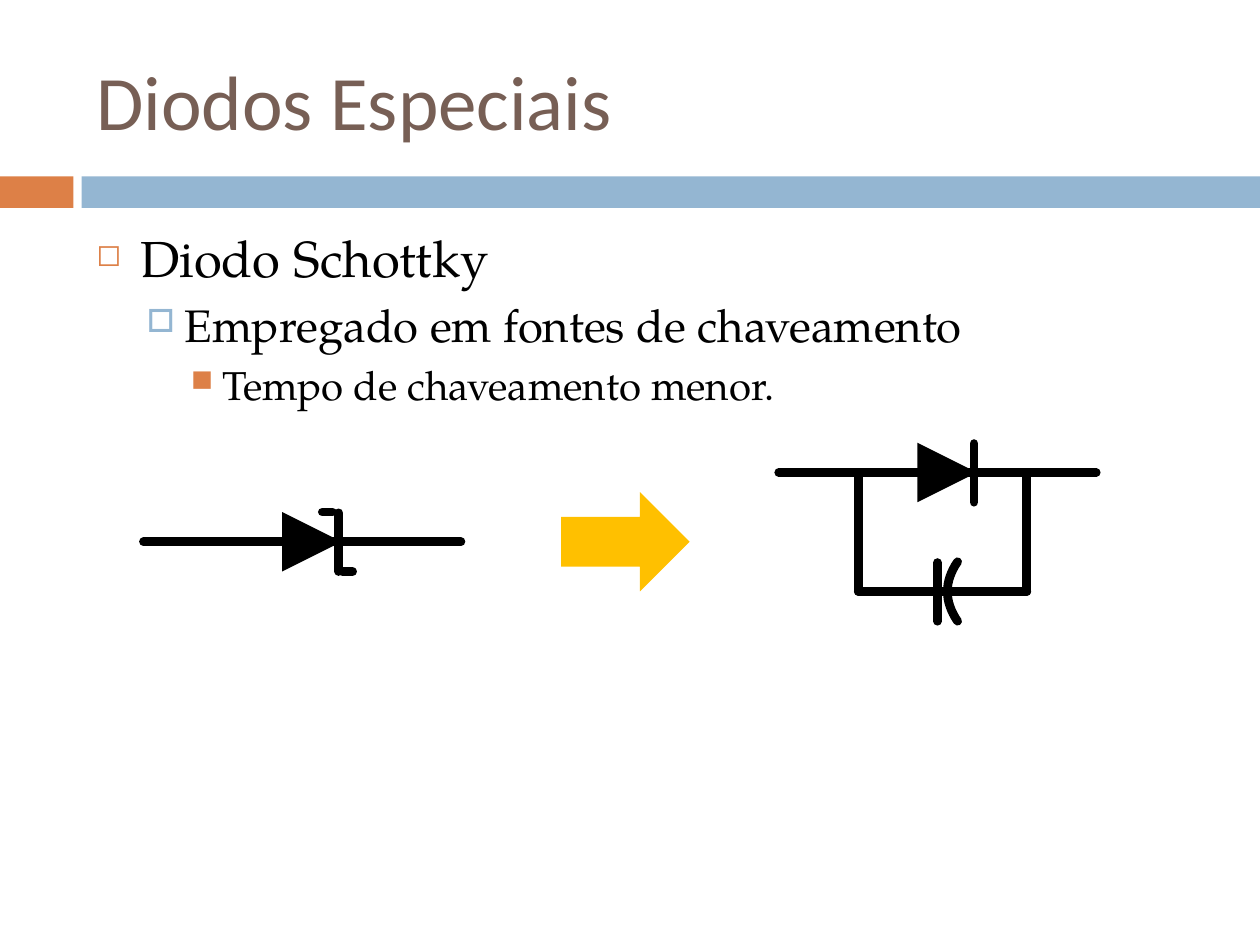
import lxml.etree
import pptx
import pptx.dml.color
import pptx.enum.shapes
import pptx.enum.text
import pptx.oxml.ns
import pptx.util

Pt = pptx.util.Pt
qn = pptx.oxml.ns.qn
SHAPES = pptx.enum.shapes.MSO_SHAPE
ANCHORS = pptx.enum.text.MSO_ANCHOR

ORANGE, BLUE, BROWN = "DD8047", "94B6D2", "775F55"
BLACK, YELLOW = "000000", "FFC000"


def color(value):
    return pptx.dml.color.RGBColor.from_string(value)


class SlideBuilder:
    title_font = "Calibri"
    body_font = "TeX Gyre Pagella"
    line_width = 5

    def __init__(self, slide):
        self.slide = slide

    def shape(self, kind, left, top, width, height, fill, rotation=0):
        shape = self.slide.shapes.add_shape(
            kind, Pt(left), Pt(top), Pt(width), Pt(height))
        shape.shadow.inherit = False
        shape.fill.solid()
        shape.fill.fore_color.rgb = color(fill)
        shape.line.fill.background()
        shape.rotation = rotation

    def stroke(self, shape):
        shape.line.width = Pt(self.line_width)
        shape.line.color.rgb = color(BLACK)
        outline = shape.line._get_or_add_ln()
        outline.set("cap", "rnd")
        lxml.etree.SubElement(outline, qn("a:round"))

    def line(self, x1, y1, x2, y2):
        connector = self.slide.shapes.add_connector(
            pptx.enum.shapes.MSO_CONNECTOR.STRAIGHT,
            Pt(x1), Pt(y1), Pt(x2), Pt(y2))
        self.stroke(connector)
        lxml.etree.SubElement(connector._element.spPr, qn("a:effectLst"))

    def arc(self, right, top, depth, height, steps=16):
        """Open parabola bulging to the left, drawn as short segments."""
        points = []
        for step in range(steps + 1):
            t = step / steps
            points.append((Pt(right - 4 * depth * t * (1 - t)), Pt(top + height * t)))
        builder = self.slide.shapes.build_freeform(*points[0])
        builder.add_line_segments(points[1:], close=False)
        curve = builder.convert_to_shape()
        curve.shadow.inherit = False
        curve.fill.background()
        self.stroke(curve)

    def diode(self, left, y):
        """Horizontal wire with a triangle and a cathode bar; returns the bar's x."""
        bar = left + 111.6
        self.line(left, y, left + 181.4, y)
        self.shape(SHAPES.ISOSCELES_TRIANGLE, left + 79.2, y - 17, 34, 34, BLACK, 90)
        self.line(bar, y - 16.5, bar, y + 17)
        return bar

    def text_box(self, left, top, width, height, anchor):
        frame = self.slide.shapes.add_textbox(
            Pt(left), Pt(top), Pt(width), Pt(height)).text_frame
        frame.word_wrap = True
        frame.vertical_anchor = anchor
        return frame

    def text(self, paragraph, words, font, fill):
        run = paragraph.add_run()
        run.text = words
        for name, value in font.items():
            setattr(run.font, name, value)
        run.font.color.rgb = color(fill)

    def title(self, words, *box):
        frame = self.text_box(*box, ANCHORS.MIDDLE)
        self.text(frame.paragraphs[0], words,
                  {"name": self.title_font, "size": Pt(44)}, BROWN)

    def bullets(self, items, *box):
        frame = self.text_box(*box, ANCHORS.TOP)
        for level, item in enumerate(items):
            paragraph = frame.add_paragraph() if level else frame.paragraphs[0]
            paragraph.level = level
            paragraph.space_before = Pt(item["before"])
            self.text(paragraph, item["words"],
                      {"name": self.body_font, "size": Pt(item["size"])}, BLACK)
            properties = paragraph._p.get_or_add_pPr()
            properties.set("marL", str(Pt(item["margin"])))
            properties.set("indent", str(-Pt(item["hanging"])))
            bullet_color = lxml.etree.SubElement(properties, qn("a:buClr"))
            lxml.etree.SubElement(bullet_color, qn("a:srgbClr"), val=item["color"])
            lxml.etree.SubElement(properties, qn("a:buSzPct"),
                                  val=str(item["scale"] * 1000))
            lxml.etree.SubElement(properties, qn("a:buChar"), char=item["bullet"])


def main():
    presentation = pptx.Presentation()
    presentation.slide_width, presentation.slide_height = Pt(720), Pt(540)
    slide = presentation.slides.add_slide(presentation.slide_layouts[6])
    builder = SlideBuilder(slide)

    # Band under the title
    builder.shape(SHAPES.RECTANGLE, 0, 100.8, 42, 18, ORANGE)
    builder.shape(SHAPES.RECTANGLE, 46.6, 100.8, 673.4, 18, BLUE)

    # Title and bullets
    builder.title("Diodos Especiais", 48, 18, 642, 78)
    builder.bullets([
        {"words": "Diodo Schottky", "size": 29, "before": 7, "margin": 25.2,
         "hanging": 25.2, "bullet": "◻", "color": ORANGE, "scale": 60},
        {"words": "Empregado em fontes de chaveamento", "size": 26, "before": 5.5,
         "margin": 50.4, "hanging": 21.6, "bullet": "□", "color": BLUE, "scale": 70},
        {"words": "Tempo de chaveamento menor.", "size": 23, "before": 5,
         "margin": 72, "hanging": 18, "bullet": "■", "color": ORANGE, "scale": 75},
    ], 48, 126, 642, 376.5)

    # Equivalent circuit: diode in parallel with a capacitor
    wire, branch = 270, 338
    builder.diode(445, wire)
    builder.line(535.7, branch - 16.5, 535.7, branch + 17)
    builder.arc(547.2, branch - 17, 5.8, 34)
    left, right = 490.5, 586.8
    builder.line(left, branch, right, branch)
    for x in (left, right):
        builder.line(x, branch, x, wire)

    # Schottky symbol: diode with hooked cathode bar
    middle = 309.6
    bar = builder.diode(82, middle)
    builder.line(bar - 3.6, middle - 17, bar - 9.4, middle - 17)
    builder.line(bar + 7.9, middle + 17, bar + 2.1, middle + 17)

    # Arrow between the two
    builder.shape(SHAPES.DOWN_ARROW, 329, 272.9, 56.7, 73.4, YELLOW, 270)

    presentation.save("out.pptx")


if __name__ == "__main__":
    main()
